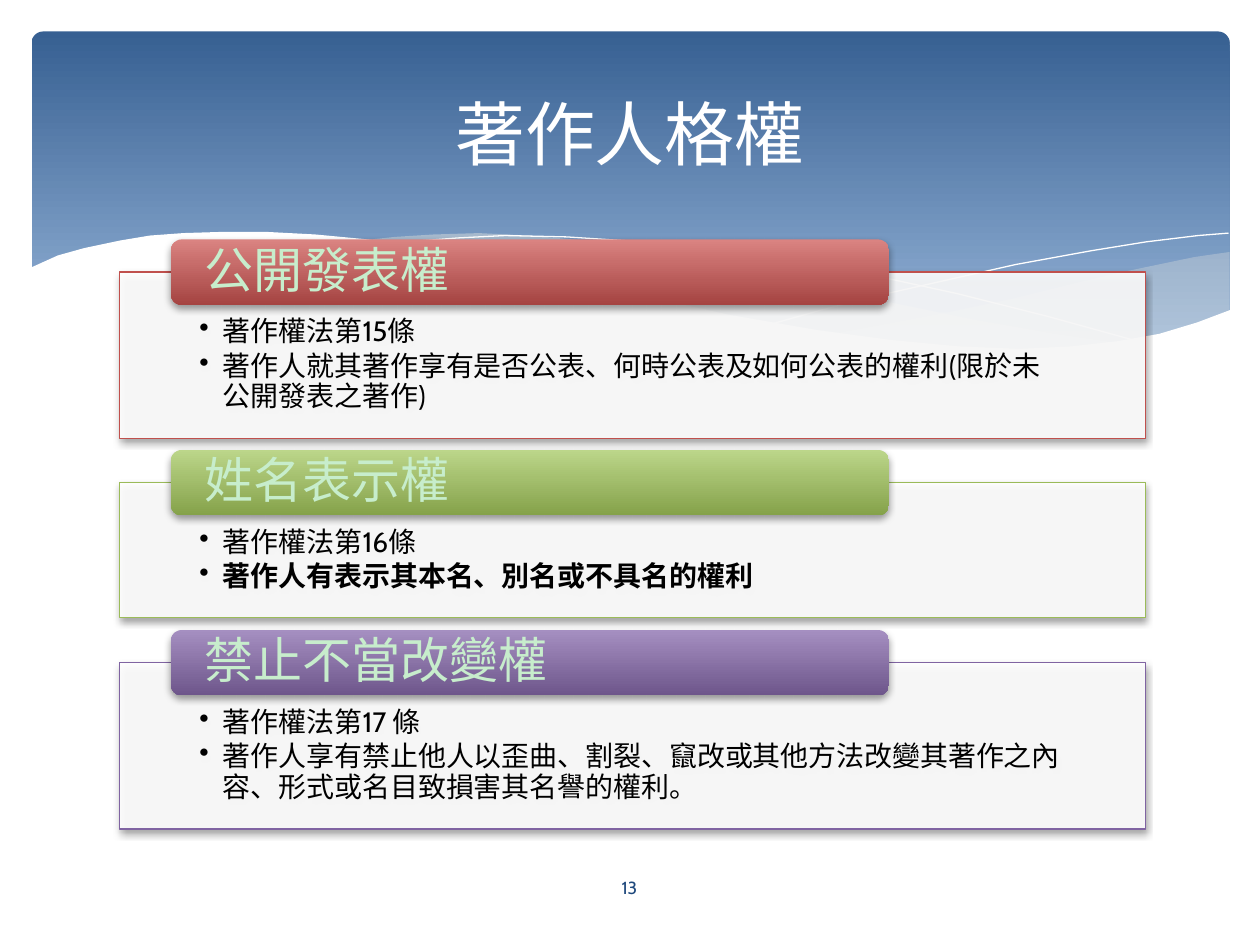
from lxml.etree import SubElement
from pptx import Presentation
from pptx.dml.color import RGBColor
from pptx.enum.shapes import MSO_SHAPE
from pptx.enum.text import MSO_ANCHOR, PP_ALIGN
from pptx.oxml.ns import qn
from pptx.util import Pt

WHITE = RGBColor(0xFF, 0xFF, 0xFF)
BLACK = RGBColor(0x00, 0x00, 0x00)
MINT = RGBColor(0xC7, 0xED, 0xCC)
CREAM = RGBColor(0xEE, 0xEC, 0xE1)
NAVY = RGBColor(0x1F, 0x49, 0x7D)
SKY_TOP = RGBColor(0x37, 0x60, 0x92)
SKY_BOTTOM = RGBColor(0x95, 0xB3, 0xD7)
RED = RGBColor(0xC0, 0x50, 0x4D)
RED_LIGHT = RGBColor(0xDA, 0x83, 0x81)
RED_DARK = RGBColor(0xA5, 0x44, 0x42)
GREEN = RGBColor(0x9B, 0xBB, 0x59)
GREEN_LIGHT = RGBColor(0xBC, 0xD6, 0x8A)
GREEN_DARK = RGBColor(0x85, 0xA2, 0x4A)
PURPLE = RGBColor(0x80, 0x64, 0xA2)
PURPLE_LIGHT = RGBColor(0xA5, 0x8F, 0xC1)
PURPLE_DARK = RGBColor(0x6E, 0x56, 0x8B)

FONT = "Cabin"
PANEL_LEFT, PANEL_WIDTH = 68.4, 586
BAND_INDENT, BAND_RISE, BAND_WIDTH, BAND_HEIGHT = 29.3, 18.7, 410.3, 37.4

RIGHT_WAVE = [
    (702.7, 144), (682.6, 146.9), (663, 151), (641.5, 155.5), (620, 160.6),
    (579.6, 170.6), (542, 178.6), (508, 185), (476, 191), (507.6, 195),
    (536.4, 198), (562.3, 199.5), (586, 200), (615, 198.8), (640, 195.8),
    (663, 191), (683.3, 185), (702.7, 177.8),
]
MIDDLE_WAVE = [
    (643, 196.6), (602.6, 190.8), (558, 183), (508.3, 172.8), (453, 160),
    (420.5, 152), (389.5, 146), (361.5, 141), (335, 137.5), (302.4, 134.6),
    (273.6, 133.2), (247.7, 134), (225.4, 135.4), (206, 137.5), (246, 143.3),
    (291, 152), (323.3, 160), (381.6, 172.8), (432.7, 183.6), (478.8, 191.5),
    (520, 197.3), (556.6, 199.5), (589, 200), (617, 199.5),
]
FALLING_LINE = [
    (222.5, 140.4), (236, 138), (261.4, 136), (288.7, 134.6), (324, 135.4),
    (367, 138.2), (419, 144), (458, 149.8), (500.4, 157.7), (547, 167.8),
    (598.3, 180.7), (653, 195.8),
]
RISING_LINE = [
    (441.4, 185), (470, 177), (500.4, 169.2), (538.6, 160.6), (580.3, 151.2),
    (623.5, 143.3), (655, 138.2), (684.7, 134.6), (702, 133.2),
]
FRONT_WAVE = [
    (703.4, 177), (684, 184.3), (662.4, 190.8), (638.6, 195), (612, 198),
    (582.5, 199.4), (548, 198), (509.8, 194.4), (466.6, 188.6), (417, 180),
    (362, 167.8), (322, 158.4), (281.5, 149), (244.8, 141.8), (210, 136.8),
    (180, 134), (152, 132.5), (127.4, 132.5), (105, 133.2), (85.7, 134.6),
    (68.4, 137.5), (48, 141.8), (33, 146), (16.6, 153.4), (16.6, 236.9),
    (703.4, 236.9),
]

RIGHTS = [
    (155.5, 95, "公開發表權", RED, RED_LIGHT, RED_DARK,
     [("著作權法第15條", False),
      ("著作人就其著作享有是否公表、何時公表及如何公表的權利(限於未公開發表之著作)", False)]),
    (275.8, 77, "姓名表示權", GREEN, GREEN_LIGHT, GREEN_DARK,
     [("著作權法第16條", False),
      ("著作人有表示其本名、別名或不具名的權利", True)]),
    (378.7, 95, "禁止不當改變權", PURPLE, PURPLE_LIGHT, PURPLE_DARK,
     [("著作權法第17 條", False),
      ("著作人享有禁止他人以歪曲、割裂、竄改或其他方法改變其著作之內容、形式或名目致損害其名譽的權利。", False)]),
]


def write_text(paragraph, text, size, color, bold=False, align=PP_ALIGN.LEFT,
               line_spacing=1.0, space_after=0, bullet_indent=0):
    """Fill a paragraph with one formatted run."""
    paragraph.alignment = align
    paragraph.line_spacing = line_spacing
    paragraph.space_after = Pt(space_after)
    run = paragraph.add_run()
    run.text = text
    run.font.name, run.font.size, run.font.bold = FONT, Pt(size), bold
    run.font.color.rgb = color
    if bullet_indent:
        properties = paragraph._p.get_or_add_pPr()
        properties.set("marL", str(Pt(bullet_indent)))
        properties.set("indent", str(-Pt(bullet_indent)))
        SubElement(properties, qn("a:buChar"), char="•")


def set_frame(shape, anchor, left=7.2, top=3.6, right=7.2, bottom=3.6):
    """Set wrapping, anchor and insets, and return the text frame."""
    frame = shape.text_frame
    frame.word_wrap = True
    frame.vertical_anchor = anchor
    frame.margin_left, frame.margin_right = Pt(left), Pt(right)
    frame.margin_top, frame.margin_bottom = Pt(top), Pt(bottom)
    return frame


def set_solid(shape, color, opacity=100):
    """Give a shape a solid fill of the given opacity in percent."""
    shape.fill.solid()
    shape.fill.fore_color.rgb = color
    if opacity < 100:
        color_element = shape._element.spPr.find(qn("a:solidFill"))[0]
        SubElement(color_element, qn("a:alpha"), val=str(opacity * 1000))


def set_gradient(shape, top_color, bottom_color, end=1.0):
    """Give a shape a gradient that runs from top to bottom."""
    shape.fill.gradient()
    shape.fill.gradient_angle = 270
    for stop, color, position in zip(shape.fill.gradient_stops, (top_color, bottom_color), (0, end)):
        stop.color.rgb = color
        stop.position = position


def add_box(slide, kind, left, top, width, height):
    """Add a preset shape without line or shadow."""
    shape = slide.shapes.add_shape(kind, Pt(left), Pt(top), Pt(width), Pt(height))
    shape.shadow.inherit = False
    shape.line.fill.background()
    return shape


def add_drop_shadow(shape):
    """Add a soft shadow below a shape."""
    effects = shape._element.spPr.find(qn("a:effectLst"))
    shadow = SubElement(effects, qn("a:outerShdw"), blurRad=str(Pt(4)), dist=str(Pt(2)),
                        dir="5400000", rotWithShape="0")
    color = SubElement(shadow, qn("a:srgbClr"), val=str(BLACK))
    SubElement(color, qn("a:alpha"), val="38000")


def add_curve(slide, points, left, top, closed=True):
    """Draw an outline through points, shifted by left and top."""
    vertices = [(Pt(left + x), Pt(top + y)) for x, y in points]
    builder = slide.shapes.build_freeform(*vertices[0], scale=1.0)
    builder.add_line_segments(vertices[1:], close=closed)
    curve = builder.convert_to_shape()
    curve.shadow.inherit = False
    curve.line.fill.background()
    return curve


def add_header(slide, left, top, width, height):
    """Draw the gradient header and the waves at its foot."""
    sky = add_box(slide, MSO_SHAPE.ROUNDED_RECTANGLE, left, top, width, height)
    sky.adjustments[0] = 0.034
    set_gradient(sky, SKY_TOP, SKY_BOTTOM, 0.9)
    shift_x, shift_y = left - 18, top - 18
    for points, opacity in ((RIGHT_WAVE, 29), (MIDDLE_WAVE, 40)):
        set_solid(add_curve(slide, points, shift_x, shift_y), CREAM, opacity)
    for points in (FALLING_LINE, RISING_LINE):
        curve = add_curve(slide, points, shift_x, shift_y, closed=False)
        curve.fill.background()
        curve.line.color.rgb = WHITE
        curve.line.width = Pt(0)
    set_solid(add_curve(slide, FRONT_WAVE, shift_x, shift_y), WHITE)


def add_right(slide, left, top, width, height, heading, accent, light, dark, items):
    """Draw one right as a bulleted panel with a heading band over its top edge."""
    panel = add_box(slide, MSO_SHAPE.RECTANGLE, left, top, width, height)
    set_solid(panel, WHITE, 90)
    panel.line.color.rgb = accent
    panel.line.width = Pt(0.75)
    add_drop_shadow(panel)
    frame = set_frame(panel, MSO_ANCHOR.TOP, 45.5, 26, 45.5, 8.6)
    for index, (text, bold) in enumerate(items):
        paragraph = frame.add_paragraph() if index else frame.paragraphs[0]
        write_text(paragraph, text, size=16, color=BLACK, bold=bold, line_spacing=0.9,
                   space_after=2.4, bullet_indent=13.5)

    band = add_box(slide, MSO_SHAPE.ROUNDED_RECTANGLE, left + BAND_INDENT, top - BAND_RISE,
                   BAND_WIDTH, BAND_HEIGHT)
    set_gradient(band, light, dark)
    add_drop_shadow(band)
    frame = set_frame(band, MSO_ANCHOR.MIDDLE, 17.5, 0, 17.5, 0)
    write_text(frame.paragraphs[0], heading, size=28, color=MINT, line_spacing=0.9)


def add_label(slide, left, top, width, height, text, size, color):
    """Add one centred line of text."""
    box = slide.shapes.add_textbox(Pt(left), Pt(top), Pt(width), Pt(height))
    frame = set_frame(box, MSO_ANCHOR.MIDDLE)
    write_text(frame.paragraphs[0], text, size=size, color=color, align=PP_ALIGN.CENTER)


def main():
    """Build the slide and save it."""
    presentation = Presentation()
    presentation.slide_width, presentation.slide_height = Pt(720), Pt(540)
    slide = presentation.slides.add_slide(presentation.slide_layouts[6])
    set_solid_background = slide.background.fill
    set_solid_background.solid()
    set_solid_background.fore_color.rgb = WHITE
    add_header(slide, 18, 18, 684.7, 194.4)
    for top, height, *content in RIGHTS:
        add_right(slide, PANEL_LEFT, top, PANEL_WIDTH, height, *content)
    add_label(slide, 36, 26.6, 648, 98.6, "著作人格權", 40, WHITE)
    add_label(slide, 314, 492.5, 91.4, 28.8, "13", 10, NAVY)
    presentation.save("out.pptx")


if __name__ == "__main__":
    main()
